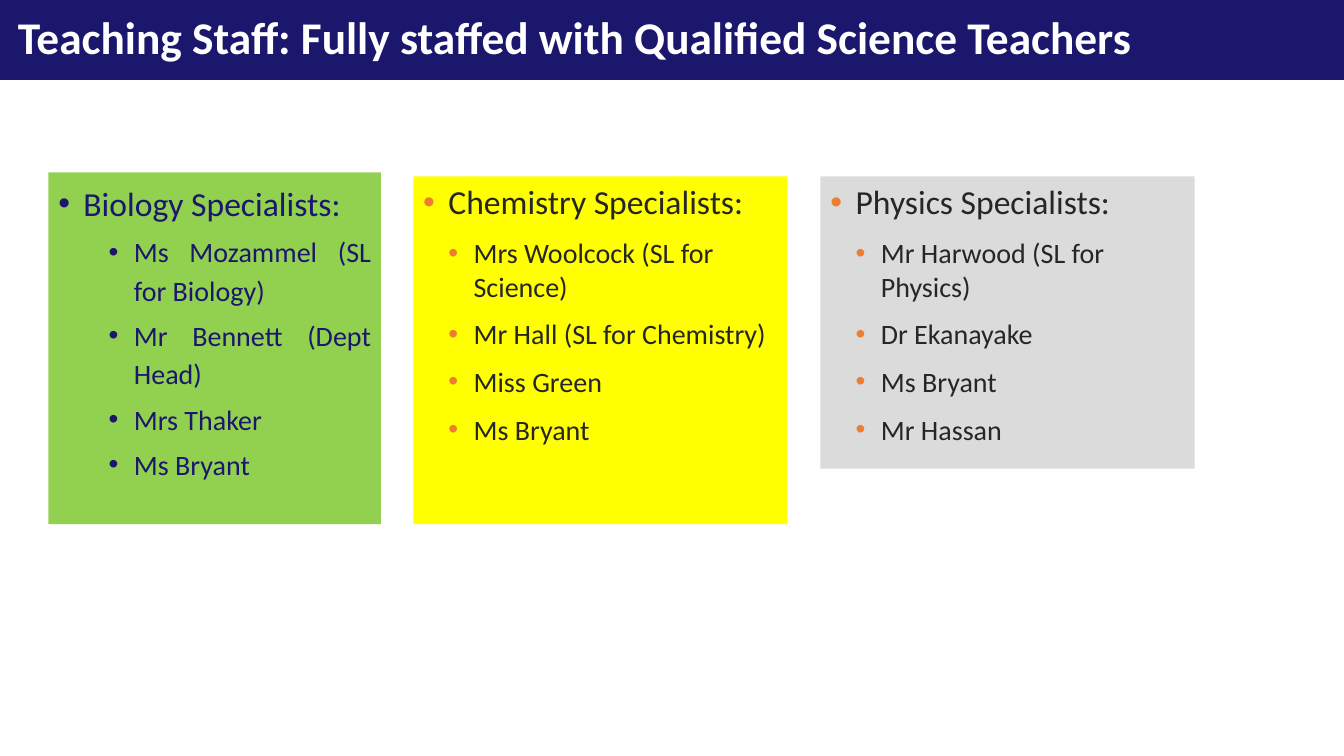
from dataclasses import dataclass

from lxml import etree
from pptx import Presentation
from pptx.dml.color import RGBColor
from pptx.enum.shapes import MSO_SHAPE
from pptx.enum.text import MSO_ANCHOR, PP_ALIGN
from pptx.oxml.ns import qn
from pptx.util import Inches, Pt

RECTANGLE = MSO_SHAPE.RECTANGLE
LEFT, JUSTIFY = PP_ALIGN.LEFT, PP_ALIGN.JUSTIFY
TOP, MIDDLE = MSO_ANCHOR.TOP, MSO_ANCHOR.MIDDLE

FONT = "Calibri"
COLOURS = {
    "navy": "1B176C",
    "navy edge": "1A186C",
    "white": "FFFFFF",
    "green": "92D050",
    "yellow": "FFFF00",
    "grey": "DBDBDB",
    "charcoal": "262626",
    "orange": "ED7D31",
}
SLIDE_WIDTH, SLIDE_HEIGHT = Inches(13.33), Inches(7.5)
HANGING = 0.25  # inches between a bullet and its text


@dataclass(frozen=True)
class Area:
    """A rectangle in percent of the slide's width and height."""
    left: float
    top: float
    width: float
    height: float

    def box(self) -> tuple[int, int, int, int]:
        return (int(SLIDE_WIDTH * self.left / 100), int(SLIDE_HEIGHT * self.top / 100),
                int(SLIDE_WIDTH * self.width / 100), int(SLIDE_HEIGHT * self.height / 100))


@dataclass(frozen=True)
class Department:
    heading: str
    teachers: tuple[str, ...]
    area: Area
    fill: str
    colour: str = "charcoal"
    bullet: str = "orange"
    alignment: PP_ALIGN = LEFT
    line_spacing: float = 1.0
    teacher_indent: float = 0.5
    teacher_space: float = 10


BANNER = Area(0, 0, 100, 10.53)
TITLE = Area(0.6, 1.2, 94.2, 8)
DEPARTMENTS = (
    Department(
        "Biology Specialists:",
        ("Ms Mozammel (SL for Biology)", "Mr Bennett (Dept Head)", "Mrs Thaker", "Ms Bryant"),
        Area(3.6, 22.8, 24.75, 46.53), "green", colour="navy", bullet="navy",
        alignment=JUSTIFY, line_spacing=1.14, teacher_indent=0.75, teacher_space=5),
    Department(
        "Chemistry Specialists:",
        ("Mrs Woolcock (SL for Science)", "Mr Hall (SL for Chemistry)", "Miss Green", "Ms Bryant"),
        Area(30.75, 23.33, 27.83, 46), "yellow"),
    Department(
        "Physics Specialists:",
        ("Mr Harwood (SL for Physics)", "Dr Ekanayake", "Ms Bryant", "Mr Hassan"),
        Area(61.05, 23.33, 27.83, 38.67), "grey"),
)


def rgb(name: str) -> RGBColor:
    return RGBColor.from_string(COLOURS[name])


def add_rectangle(slide, area: Area, fill: str, line: str | None = None):
    shape = slide.shapes.add_shape(RECTANGLE, *area.box())
    shape.shadow.inherit = False
    shape.fill.solid()
    shape.fill.fore_color.rgb = rgb(fill)
    if line:
        shape.line.color.rgb = rgb(line)
        shape.line.width = Pt(1)
    else:
        shape.line.fill.background()
    return shape


def add_bullet(paragraph, colour: str, indent: float) -> None:
    properties = paragraph._p.get_or_add_pPr()
    properties.set("marL", str(Inches(indent)))
    properties.set("indent", str(-Inches(HANGING)))
    bullet_colour = etree.SubElement(properties, qn("a:buClr"))
    etree.SubElement(bullet_colour, qn("a:srgbClr"), val=COLOURS[colour])
    etree.SubElement(properties, qn("a:buFont"), typeface="Arial")
    etree.SubElement(properties, qn("a:buChar"), char="•")


def write(paragraph, text: str, *, size: float, colour: str, bold: bool = False,
          alignment: PP_ALIGN = LEFT, line_spacing: float = 1.0, space_before: float = 0,
          bullet: str | None = None, indent: float = 0, level: int = 0) -> None:
    if bullet:
        add_bullet(paragraph, bullet, indent)
    paragraph.level = level
    paragraph.alignment = alignment
    paragraph.line_spacing = line_spacing
    paragraph.space_before = Pt(space_before)
    run = paragraph.add_run()
    run.text = text
    run.font.name = FONT
    run.font.size = Pt(size)
    run.font.bold = bold
    run.font.color.rgb = rgb(colour)


def add_title(slide, text: str) -> None:
    frame = slide.shapes.add_textbox(*TITLE.box()).text_frame
    frame.word_wrap = True
    frame.vertical_anchor = MIDDLE
    write(frame.paragraphs[0], text, size=32.4, colour="white", bold=True, line_spacing=0.9)


def add_department(slide, department: Department) -> None:
    frame = add_rectangle(slide, department.area, department.fill).text_frame
    frame.word_wrap = True
    frame.vertical_anchor = TOP
    common = dict(colour=department.colour, bullet=department.bullet,
                  alignment=department.alignment, line_spacing=department.line_spacing)
    write(frame.paragraphs[0], department.heading, size=24, indent=HANGING, **common)
    for teacher in department.teachers:
        write(frame.add_paragraph(), teacher, size=20, level=1,
              indent=department.teacher_indent,
              space_before=department.teacher_space, **common)


def main() -> None:
    presentation = Presentation()
    presentation.slide_width, presentation.slide_height = SLIDE_WIDTH, SLIDE_HEIGHT
    slide = presentation.slides.add_slide(presentation.slide_layouts[6])

    # Title banner
    add_rectangle(slide, BANNER, "navy", line="navy edge")
    add_title(slide, "Teaching Staff: Fully staffed with Qualified Science Teachers")

    # One panel per science
    for department in DEPARTMENTS:
        add_department(slide, department)

    presentation.save("out.pptx")


if __name__ == "__main__":
    main()
